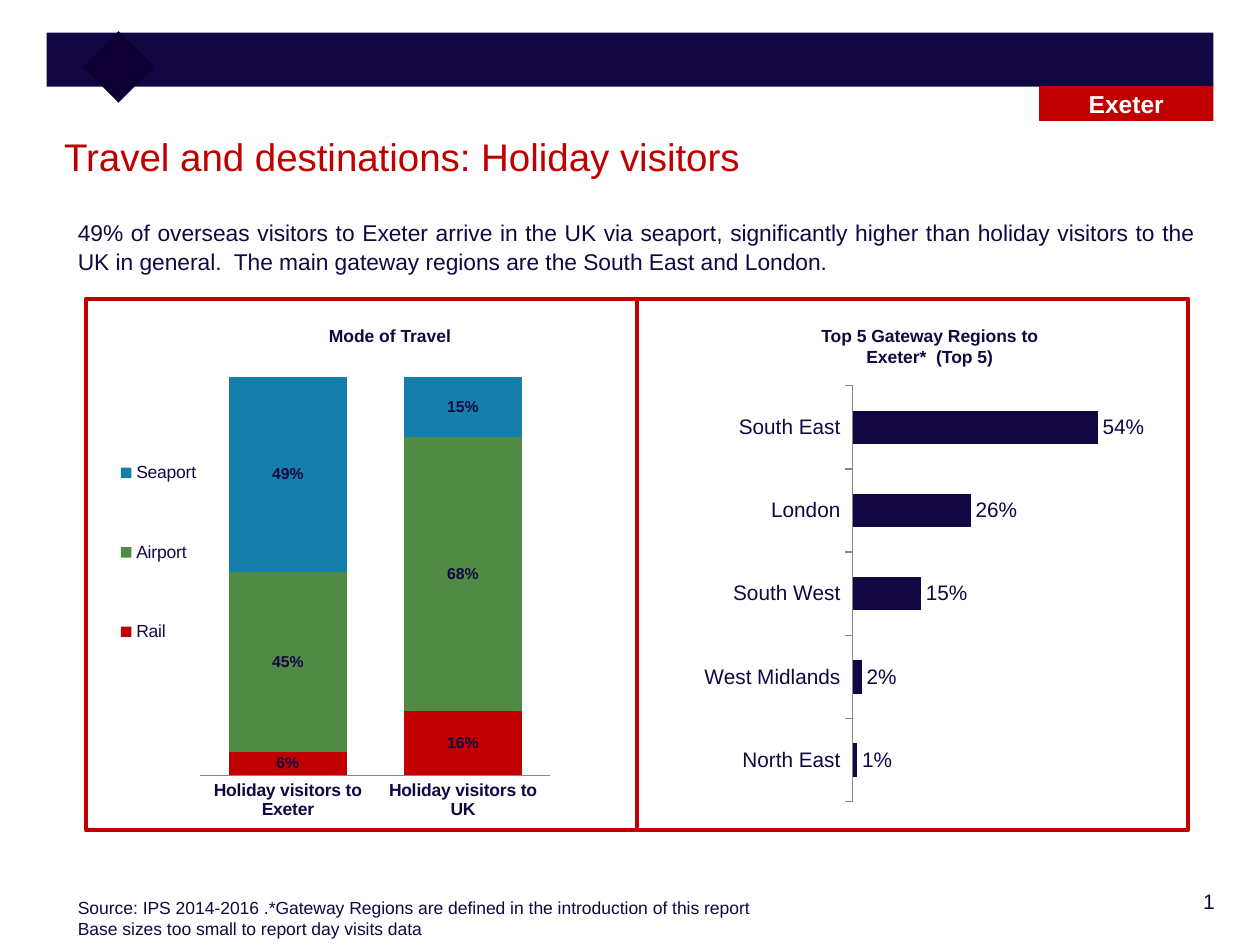
from lxml.etree import SubElement
from pptx import Presentation
from pptx.chart.data import CategoryChartData
from pptx.dml.color import RGBColor
from pptx.enum.chart import XL_CHART_TYPE, XL_LABEL_POSITION, XL_LEGEND_POSITION, XL_TICK_MARK
from pptx.enum.shapes import MSO_SHAPE
from pptx.enum.text import MSO_ANCHOR, PP_ALIGN
from pptx.oxml import parse_xml
from pptx.oxml.ns import nsdecls, qn
from pptx.util import Cm, Pt

COLORS = {
    "navy": "120742",
    "dark": "0E0033",
    "red": "C00000",
    "green": "518A45",
    "blue": "157EAB",
    "gray": "868686",
    "white": "FFFFFF",
}


def rgb(name):
    return RGBColor.from_string(COLORS[name])


def style(font, size, color="navy", bold=False):
    font.name = "Arial"
    font.size = Pt(size)
    font.bold = bold
    font.color.rgb = rgb(color)


def fill_text(frame, lines, size, color="navy", bold=False, align=PP_ALIGN.LEFT):
    frame.word_wrap = True
    frame.text = "\n".join(lines)
    for para in frame.paragraphs:
        para.alignment = align
        style(para.font, size, color, bold)


def add_text(slide, box, lines, size, **look):
    frame = slide.shapes.add_textbox(*map(Cm, box)).text_frame
    fill_text(frame, lines, size, **look)
    return frame


def add_rect(slide, box, fill=None, line=None):
    rect = slide.shapes.add_shape(MSO_SHAPE.RECTANGLE, *map(Cm, box))
    rect.shadow.inherit = False
    if fill:
        rect.fill.solid()
        rect.fill.fore_color.rgb = rgb(fill)
    else:
        rect.fill.background()
    if line:
        rect.line.color.rgb = rgb(line)
        rect.line.width = Pt(2.25)
    else:
        rect.line.fill.background()
    return rect


def add_title(slide, text):
    title = slide.shapes.title
    title.left, title.top, title.width, title.height = map(Cm, (1.04, 2.55, 23.39, 1.55))
    title.text_frame.vertical_anchor = MSO_ANCHOR.TOP
    fill_text(title.text_frame, [text], 22, "red")


def add_number(slide):
    """Add the slide number as a field."""
    frame = add_text(slide, (21.67, 17.78, 3.07, 0.91), [""], 12, align=PP_ALIGN.RIGHT)
    field = parse_xml(
        f'<a:fld {nsdecls("a")} id="{{B6F15528-21DE-4FAA-801E-634DDDAF4B2B}}" type="slidenum">'
        '<a:rPr lang="en-GB" sz="1200"><a:solidFill>'
        f'<a:srgbClr val="{COLORS["navy"]}"/></a:solidFill><a:latin typeface="Arial"/></a:rPr>'
        "<a:t>5</a:t></a:fld>"
    )
    frame.paragraphs[0]._p.insert(1, field)


def set_layout(parent, index, place, inner=False):
    """Fix a chart part at x, y, w, h, as shares of the chart's size."""
    for old in parent.findall(qn("c:layout")):
        parent.remove(old)
    layout = parse_xml(f'<c:layout {nsdecls("c")}/>')
    manual = SubElement(layout, qn("c:manualLayout"))
    parts = [("layoutTarget", "inner")] if inner else []
    parts += [("xMode", "edge"), ("yMode", "edge"), *zip("xywh", place)]
    for tag, val in parts:
        SubElement(manual, qn(f"c:{tag}")).set("val", str(val))
    parent.insert(index, layout)


def add_chart(slide, kind, box, cats, rows, gap, plot_at, label):
    """Add a bar chart; rows hold name, values and colour, label size and weight."""
    data = CategoryChartData(number_format="0%")
    data.categories = cats
    for name, vals, _ in rows:
        data.add_series(name, vals)
    chart = slide.shapes.add_chart(kind, *map(Cm, box), data).chart
    chart.has_title = False
    chart.has_legend = False
    style(chart.font, 10)
    set_layout(chart._chartSpace.chart.plotArea, 0, plot_at, inner=True)

    plot = chart.plots[0]
    plot.gap_width = gap
    plot.vary_by_categories = False
    for series, (_, _, color) in zip(plot.series, rows):
        series.format.fill.solid()
        series.format.fill.fore_color.rgb = rgb(color)
        marks = series.data_labels
        marks.show_value = True
        marks.number_format = "0%"
        marks.number_format_is_linked = False
        style(marks.font, *label[:1], bold=label[1])

    chart.value_axis.visible = False
    chart.value_axis.has_major_gridlines = False
    chart.value_axis.minimum_scale = 0
    chart.category_axis.format.line.color.rgb = rgb("gray")
    return chart


def add_modes(slide):
    rows = [
        ("Rail", (0.06, 0.16), "red"),
        ("Airport", (0.45, 0.68), "green"),
        ("Seaport", (0.49, 0.15), "blue"),
    ]
    cats = ["Holiday visitors to Exeter", "Holiday visitors to UK"]
    chart = add_chart(slide, XL_CHART_TYPE.COLUMN_STACKED_100, (1.73, 7.06, 9.78, 9.7),
                      cats, rows, 49, (0.236, 0.056, 0.722, 0.828), (9, True))
    chart.plots[0].overlap = 100
    chart.value_axis.maximum_scale = 1
    axis = chart.category_axis
    axis.major_tick_mark = XL_TICK_MARK.NONE
    style(axis.tick_labels.font, 10, bold=True)
    chart.has_legend = True
    legend = chart.legend
    legend.position = XL_LEGEND_POSITION.LEFT
    legend.include_in_layout = False
    style(legend.font, 10)
    set_layout(legend._element, 1, (0.06, 0.11, 0.18, 0.62))


def add_gates(slide):
    cats = ["South East", "London", "South West", "West Midlands", "North East"]
    rows = [("Series 1", (0.54, 0.26, 0.15, 0.02, 0.01), "navy")]
    chart = add_chart(slide, XL_CHART_TYPE.BAR_CLUSTERED, (13.77, 7.39, 9.3, 9.17),
                      cats, rows, 150, (0.372, 0.042, 0.597, 0.915), (12, False))
    chart.plots[0].series[0].data_labels.position = XL_LABEL_POSITION.OUTSIDE_END
    chart.value_axis.maximum_scale = 0.6
    axis = chart.category_axis
    axis.reverse_order = True
    axis.major_tick_mark = XL_TICK_MARK.OUTSIDE
    style(axis.tick_labels.font, 12)


def main():
    deck = Presentation()
    deck.slide_width, deck.slide_height = Cm(25.4), Cm(19.05)
    slide = deck.slides.add_slide(deck.slide_layouts[5])

    add_rect(slide, (0.94, 0.66, 23.52, 1.09), "navy")
    add_rect(slide, (1.88, 0.84, 1.02, 1.02), "dark").rotation = 45
    add_number(slide)
    add_title(slide, "Travel and destinations: Holiday visitors")
    intro = add_text(slide, (1.32, 4.24, 22.99, 1.88), [
        "49% of overseas visitors to Exeter arrive in the UK via seaport, significantly "
        "higher than holiday visitors to the UK in general.  The main gateway regions "
        "are the South East and London."], 13, align=PP_ALIGN.JUSTIFY)
    intro.paragraphs[0].line_spacing = 1.07

    add_text(slide, (6.38, 6.43, 3.73, 0.79), ["Mode of Travel"], 10, bold=True)
    add_modes(slide)
    add_text(slide, (16.05, 6.43, 5.38, 1.17), ["Top 5 Gateway Regions to Exeter*  (Top 5)"],
             10, bold=True, align=PP_ALIGN.CENTER)
    add_gates(slide)
    width = 11.11
    for col in range(2):
        add_rect(slide, (1.73 + col * width, 6.02, width, 10.72), line="red")

    add_text(slide, (1.32, 17.96, 23.06, 1.12), [
        "Source: IPS 2014-2016 .*Gateway Regions are defined in the introduction of this report",
        "Base sizes too small to report day visits data"], 10)
    tag = add_rect(slide, (20.95, 1.73, 3.51, 0.71), "red").text_frame
    tag.vertical_anchor = MSO_ANCHOR.MIDDLE
    fill_text(tag, ["Exeter"], 14, "white", True, PP_ALIGN.CENTER)

    deck.save("out.pptx")


if __name__ == "__main__":
    main()
